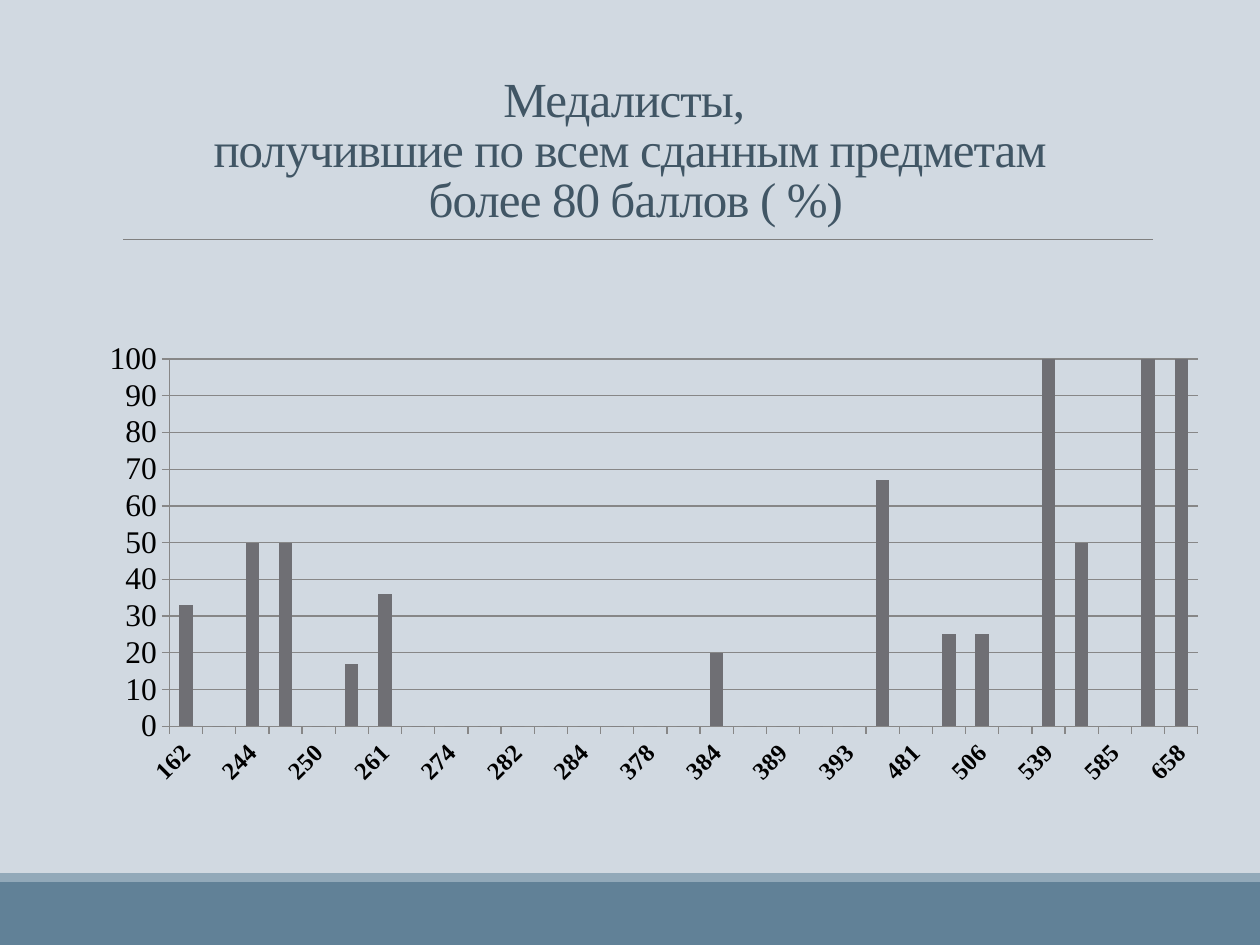
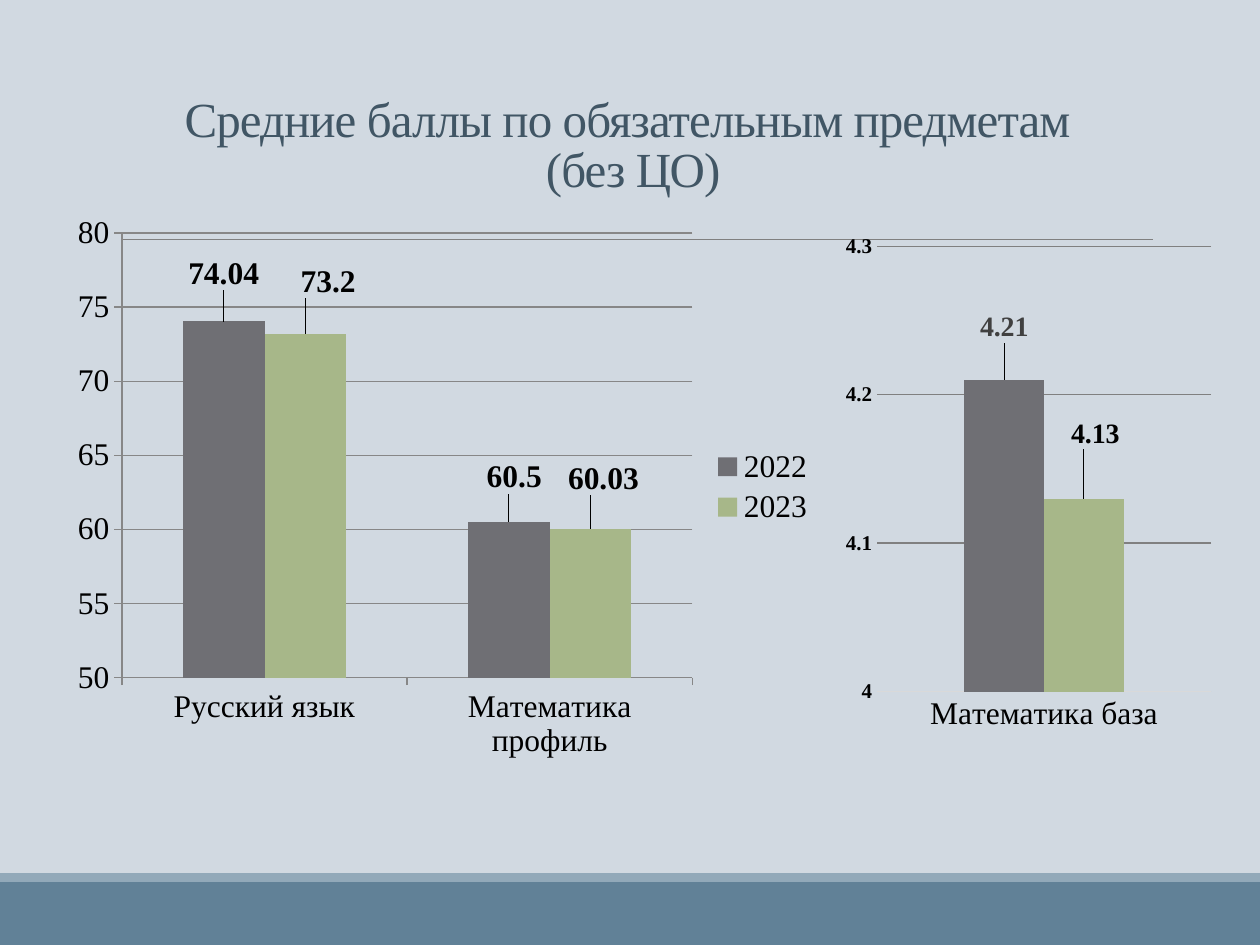
from lxml import etree
from pptx import Presentation
from pptx.chart.data import CategoryChartData
from pptx.dml.color import RGBColor
from pptx.enum.chart import XL_CHART_TYPE, XL_LABEL_POSITION, XL_LEGEND_POSITION, XL_TICK_MARK
from pptx.enum.shapes import MSO_CONNECTOR, MSO_SHAPE
from pptx.enum.text import MSO_ANCHOR, PP_ALIGN
from pptx.oxml.ns import qn
from pptx.util import Inches, Pt

COLUMNS = XL_CHART_TYPE.COLUMN_CLUSTERED
ABOVE_BAR = XL_LABEL_POSITION.OUTSIDE_END
RIGHT = XL_LEGEND_POSITION.RIGHT
TICK_OUT, TICK_NONE = XL_TICK_MARK.OUTSIDE, XL_TICK_MARK.NONE
RECTANGLE = MSO_SHAPE.RECTANGLE
STRAIGHT = MSO_CONNECTOR.STRAIGHT
BOTTOM, CENTER = MSO_ANCHOR.BOTTOM, PP_ALIGN.CENTER

FONT = "Times New Roman"
COLORS = {
    "background": "D1D9E1",
    "band": "618197",
    "stripe": "92A9B9",
    "rule": "808080",
    "axis": "878787",
    "pale_axis": "D9D9D9",
    "title": "415665",
    "text": "000000",
    "soft_text": "404040",
    "2022": "6F6F74",
    "2023": "A7B789",
}

SCHOOLS = """162 221 244 249 250 254 261 264 274 277 282 283 284 377 378 386
384 387 389 392 393 397 481 504 506 538 539 551 585 654 658""".split()
MEDALIST_SHARES = {
    "162": 33, "244": 50, "249": 50, "254": 17, "261": 36, "384": 20, "397": 67,
    "504": 25, "506": 25, "539": 100, "551": 50, "654": 100, "658": 100,
}


def rgb(name):
    return RGBColor.from_string(COLORS[name])


def style_font(font, size=18, color="text", bold=False):
    font.name, font.size, font.bold = FONT, Pt(size), bold
    font.color.rgb = rgb(color)


def write_text(frame, text, *, size, color, align=CENTER, anchor=BOTTOM,
               line_spacing=0.85, tracking=-0.5):
    frame.text = text
    frame.word_wrap = True
    frame.vertical_anchor = anchor
    for paragraph in frame.paragraphs:
        paragraph.alignment = align
        paragraph.line_spacing = line_spacing
        for run in paragraph.runs:
            style_font(run.font, size, color)
            run.font._element.set("spc", str(int(tracking * 100)))


def manual_layout(inner=False, **fractions):
    """Build a c:layout element from fractions of the chart's size."""
    layout = etree.Element(qn("c:layout"))
    manual = etree.SubElement(layout, qn("c:manualLayout"))
    if inner:
        fractions = {"layoutTarget": "inner", "xMode": "edge", "yMode": "edge", **fractions}
    for tag, value in fractions.items():
        etree.SubElement(manual, qn(f"c:{tag}")).set("val", str(value))
    return layout


class Deck:
    def __init__(self):
        self.prs = Presentation()
        self.prs.slide_width, self.prs.slide_height = Inches(10), Inches(7.5)
        fill = self.prs.slide_master.background.fill
        fill.solid()
        fill.fore_color.rgb = rgb("background")
        self.slide = None

    def new_slide(self, title, box):
        self.slide = self.prs.slides.add_slide(self.prs.slide_layouts[5])
        self.band(7, 0.5, "band")
        self.band(6.93, 0.07, "stripe")
        self.rule(0.98, 9.15, 1.9)
        heading = self.slide.shapes.title
        heading.left, heading.top, heading.width, heading.height = map(Inches, box)
        write_text(heading.text_frame, title, size=28, color="title")

    def band(self, top, height, color):
        band = self.slide.shapes.add_shape(
            RECTANGLE, 0, Inches(top), self.prs.slide_width, Inches(height))
        band.shadow.inherit = False
        band.fill.solid()
        band.fill.fore_color.rgb = rgb(color)
        band.line.fill.background()

    def rule(self, left, right, y):
        rule = self.slide.shapes.add_connector(
            STRAIGHT, Inches(left), Inches(y), Inches(right), Inches(y))
        rule.line.color.rgb = rgb("rule")
        rule.line.width = Pt(0.5)
        etree.SubElement(rule._element.spPr, qn("a:effectLst"))

    def column_chart(self, box, categories, series, plot_area, gap=150):
        """Add a column chart; series maps a year to its values."""
        data = CategoryChartData()
        data.categories = categories
        for year, values in series.items():
            data.add_series(year, values)
        chart = self.slide.shapes.add_chart(COLUMNS, *map(Inches, box), data).chart
        style_font(chart.font)
        chart.has_title = chart.has_legend = False
        plot = chart.plots[0]
        plot.gap_width, plot.overlap, plot.vary_by_categories = gap, 0, False
        for bars in plot.series:
            bars.format.fill.solid()
            bars.format.fill.fore_color.rgb = rgb(bars.name)
            bars.invert_if_negative = False
        area = chart._chartSpace.chart.plotArea
        for automatic in area.findall(qn("c:layout")):
            area.remove(automatic)
        area.insert(0, manual_layout(inner=True, **dict(zip("xywh", plot_area))))
        return chart

    def axis(self, axis, *, tick=TICK_OUT, line="axis", grid=None, scale=None, **font):
        axis.major_tick_mark, axis.minor_tick_mark = tick, TICK_NONE
        style_font(axis.tick_labels.font, **font)
        if line:
            axis.format.line.color.rgb = rgb(line)
            axis.format.line.width = Pt(0.75)
        else:
            axis.format.line.fill.background()
        axis.has_major_gridlines = grid is not None
        if grid:
            grid_line = axis.major_gridlines.format.line
            grid_line.color.rgb = rgb(grid)
            grid_line.width = Pt(0.75)
        if scale:
            axis.minimum_scale, axis.maximum_scale, axis.major_unit = scale

    def value_labels(self, bars, shifts, **font):
        """Label each bar, moved by its (x, y) share of the chart's size."""
        for index, (x, y) in enumerate(shifts):
            label = bars.points[index].data_label
            style_font(label.font, bold=True, **font)
            label.position = ABOVE_BAR
        for item, (x, y) in zip(bars._element.iter(qn("c:dLbl")), shifts):
            item.insert(1, manual_layout(x=x, y=y))

    def legend(self, chart):
        chart.has_legend = True
        chart.legend.position = RIGHT
        chart.legend.include_in_layout = False
        style_font(chart.legend.font)


def medalists_slide(deck):
    deck.new_slide("Медалисты, \vполучившие по всем сданным предметам\v более 80 баллов ( %)",
                   (0.5, 0.6, 9, 1.26))
    shares = [MEDALIST_SHARES.get(school, 0) for school in SCHOOLS]
    chart = deck.column_chart((0.67, 2.65, 8.99, 4.16), SCHOOLS, {"2022": shares},
                              (0.075, 0.048, 0.908, 0.701))
    deck.axis(chart.category_axis, size=14, bold=True)
    slant = chart.category_axis._element.find(qn("c:txPr")).find(qn("a:bodyPr"))
    slant.set("rot", str(-45 * 60000))
    deck.axis(chart.value_axis, grid="axis", scale=(0, 100, 10))


def average_scores_slide(deck):
    deck.new_slide("Средние баллы по обязательным предметам \v(без ЦО)",
                   (0.9, 0.31, 8.25, 1.31))

    scores = deck.column_chart(
        (0.5, 1.62, 6.07, 4.49), ["Русский язык", "Математика профиль"],
        {"2022": [74.04, 60.5], "2023": [73.2, 60.03]}, (0.077, 0.051, 0.746, 0.786))
    deck.axis(scores.category_axis)
    deck.axis(scores.value_axis, grid="axis", scale=(50, 80, 5))
    deck.legend(scores)
    before, after = scores.plots[0].series
    deck.value_labels(before, [(0, -0.045), (0.007, -0.04)])
    deck.value_labels(after, [(0.03, -0.053), (0.017, -0.05)])

    basic_maths = deck.column_chart(
        (6.65, 1.78, 3.02, 4.09), ["Математика база"],
        {"2022": [4.21], "2023": [4.13]}, (0.103, 0.043, 0.878, 0.864), gap=219)
    deck.axis(basic_maths.category_axis, tick=TICK_NONE, line="pale_axis")
    deck.axis(basic_maths.value_axis, tick=TICK_NONE, line=None, grid="rule",
              scale=(4, 4.3, 0.1), size=12, bold=True)
    before, after = basic_maths.plots[0].series
    deck.value_labels(before, [(0, -0.062)], size=16, color="soft_text")
    deck.value_labels(after, [(0.03, -0.085)], size=16)


def main():
    deck = Deck()
    medalists_slide(deck)
    average_scores_slide(deck)
    deck.prs.save("out.pptx")


if __name__ == "__main__":
    main()
